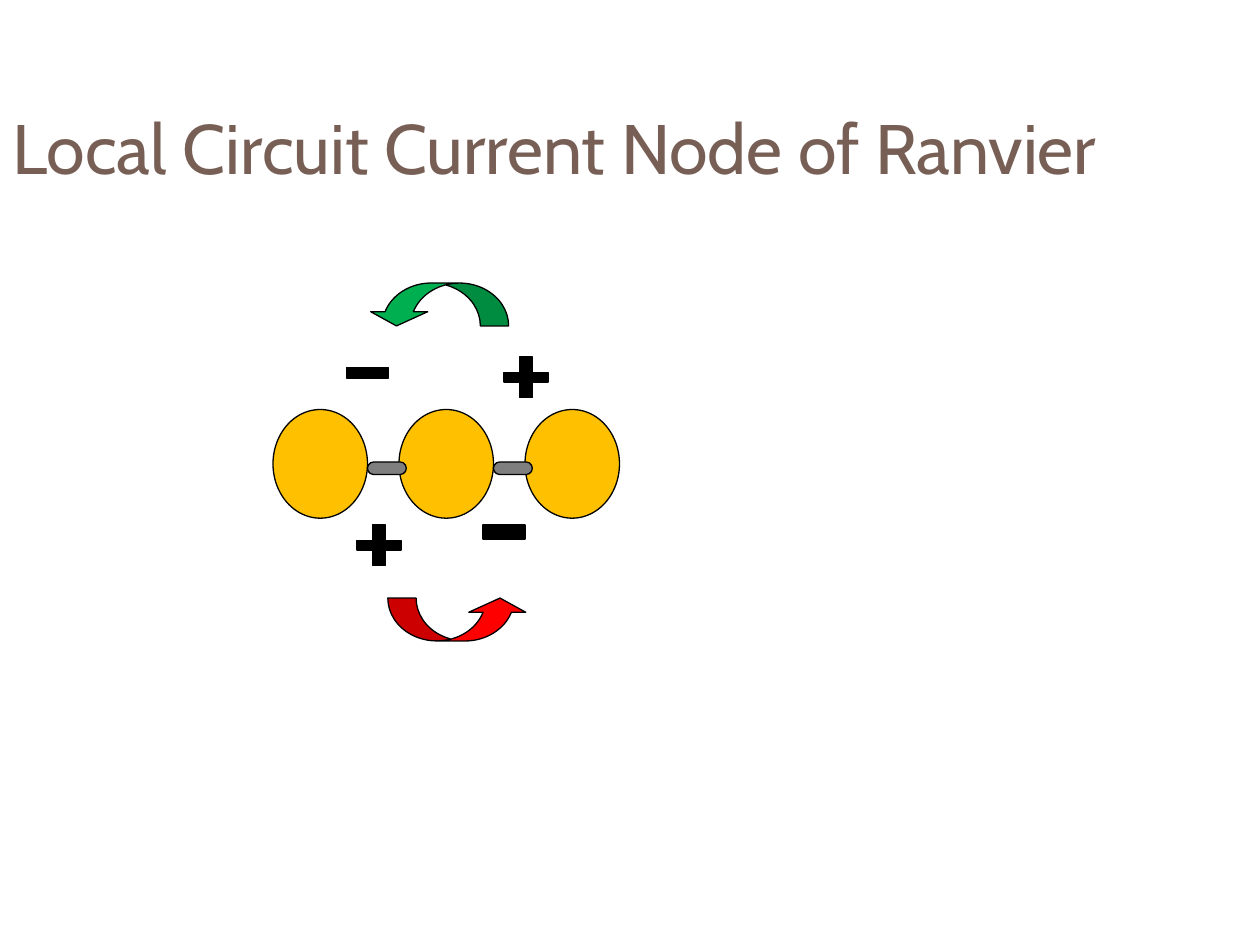
from pptx import Presentation
from pptx import util as u
from pptx.dml import color
from pptx.enum import shapes, text

COLORS = {
    "title": "775F55", "myelin": "FFC000", "axon": "7F7F7F", "ink": "000000",
    "outward": "00B050", "inward": "FF0000",
}
KIND = shapes.MSO_SHAPE
COLUMNS, ROWS = 120, 90


class Sketch:
    """Draws styled elements on the current page, placed by grid columns and rows."""

    font = "Cabin"
    outline = 0.75

    def __init__(self, deck):
        self.deck = deck
        self.page = deck.slides.add_slide(deck.slide_layouts[6])

    def place(self, left, top, width, height):
        column, row = self.deck.slide_width / COLUMNS, self.deck.slide_height / ROWS
        return [round(n) for n in (left * column, top * row, width * column, height * row)]

    def tint(self, name):
        return color.RGBColor.from_string(COLORS[name])

    def title(self, words, area, size):
        box = self.page.shapes.add_textbox(*self.place(*area))
        frame = {"word_wrap": True, "vertical_anchor": text.MSO_ANCHOR.MIDDLE}
        for name, value in frame.items():
            setattr(box.text_frame, name, value)
        span = box.text_frame.paragraphs[0].add_run()
        span.text = words
        for name, value in {"name": self.font, "size": u.Pt(size)}.items():
            setattr(span.font, name, value)
        span.font.color.rgb = self.tint("title")

    def shape(self, kind, area, fill, adjustments=(), rotation=0):
        shape = self.page.shapes.add_shape(kind, *self.place(*area))
        shape.shadow.inherit = False
        shape.rotation = rotation
        for index, value in enumerate(adjustments):
            shape.adjustments[index] = value
        shape.fill.solid()
        shape.fill.fore_color.rgb = self.tint(fill)
        shape.line.color.rgb = self.tint("ink")
        shape.line.width = u.Pt(self.outline)

    def myelin(self, left):
        self.shape(KIND.OVAL, (left, 39, 9, 10.35), "myelin")

    def node(self, left):
        self.shape(KIND.FLOWCHART_TERMINATOR, (left, 44, 3.7, 1.2), "axon")

    def minus(self, left, top, height):
        self.shape(KIND.RECTANGLE, (left, top, 4, height), "ink")

    def plus(self, left, top):
        self.shape(KIND.CROSS, (left, top, 4.2, 3.85), "ink", [0.38])

    def current(self, left, top, fill, rotation):
        self.shape(KIND.CURVED_RIGHT_ARROW, (left, top, 4.08, 13.4), fill,
                   [0.66, 1.33, 0.33], rotation)


def main():
    deck = Presentation()
    deck.slide_width, deck.slide_height = u.Inches(10), u.Inches(7.5)
    sketch = Sketch(deck)
    sketch.title("Local Circuit Current Node of Ranvier", (0, 5, 108, 18), 40)
    for left in (38, 26, 50):
        sketch.myelin(left)
    for left in (35, 47):
        sketch.node(left)
    sketch.minus(33, 35, 1)
    sketch.minus(46, 50, 1.35)
    sketch.plus(48, 34)
    sketch.plus(34, 50)
    sketch.current(39.7, 22.3, "outward", 90)
    sketch.current(41.6, 52.3, "inward", 270)
    deck.save("out.pptx")


if __name__ == "__main__":
    main()
